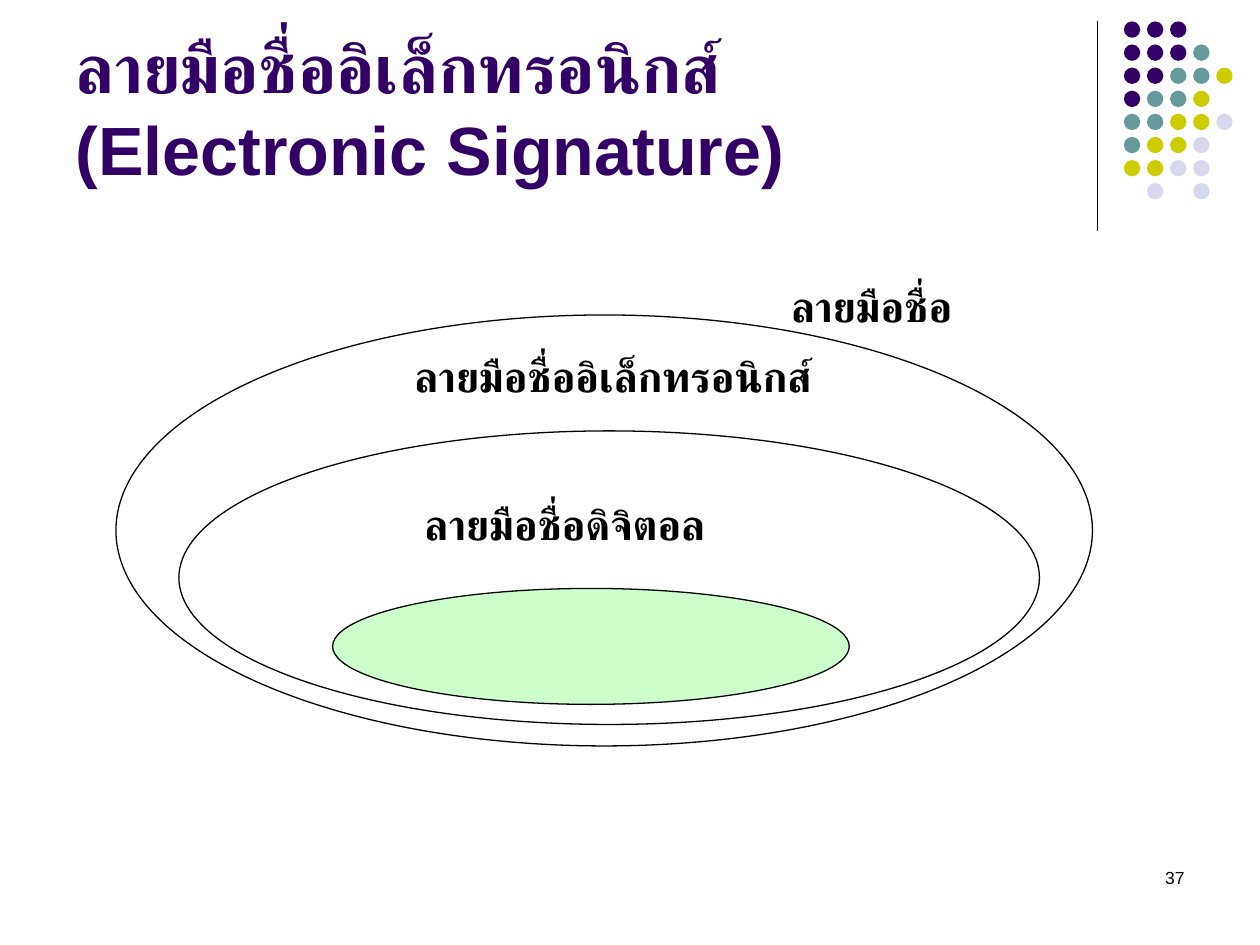
from dataclasses import dataclass
from typing import Optional

from lxml.etree import SubElement
from pptx import Presentation
from pptx.dml.color import RGBColor
from pptx.enum.shapes import MSO_CONNECTOR, MSO_SHAPE
from pptx.enum.text import MSO_ANCHOR, PP_ALIGN
from pptx.oxml.ns import qn
from pptx.util import Inches, Pt

COLORS = {
    "black": "000000",
    "purple": "330066",
    "teal": "669999",
    "olive": "CCCC00",
    "lavender": "D8D8EC",
    "mint": "CCFFCC",
}

# Dot pattern: one letter per colour, a space for a gap
DOT_COLORS = {"P": "purple", "T": "teal", "O": "olive", "L": "lavender"}
DOT_ROWS = ["PPP", "PPPT", "PPTTO", "PTTO", "TTOOL", "TOOL", "OOLL", " L L"]
DOT_LEFT, DOT_TOP, DOT_SIZE = 8.92, 0.17, 0.13
DOT_PITCH = 1.1 / 6


@dataclass
class Ellipse:
    left: float
    top: float
    width: float
    height: float
    fill: Optional[str] = None
    line: Optional[str] = "black"


@dataclass
class Label:
    lines: list[str]
    left: float
    top: float
    width: float
    height: float
    size: float = 24
    font: str = "Karla"
    color: str = "black"
    bold: bool = True
    align: PP_ALIGN = PP_ALIGN.LEFT
    anchor: MSO_ANCHOR = MSO_ANCHOR.TOP


SIGNATURE_SETS = [
    Ellipse(0.92, 2.5, 7.75, 3.42),
    Ellipse(1.42, 3.42, 6.83, 2.33),
    Ellipse(2.64, 4.67, 4.1, 0.92, fill="mint"),
]

LABELS = [
    Label(["37"], 7.17, 6.83, 2.33, 0.5, size=10, font="Arial", bold=False,
          align=PP_ALIGN.RIGHT),
    Label(["ลายมือชื่ออิเล็กทรอนิกส์ ", "(Electronic Signature)"],
          0.5, 0.13, 8.25, 1.42, size=39, font="Arial", color="purple",
          anchor=MSO_ANCHOR.BOTTOM),
    Label(["ลายมือชื่อ"], 6.18, 2.18, 3.08, 0.5),
    Label(["ลายมือชื่ออิเล็กทรอนิกส์"], 3.19, 2.73, 4.1, 0.5),
    Label(["ลายมือชื่อดิจิตอล"], 3.27, 3.91, 3.58, 0.5),
]


def rgb(name: str) -> RGBColor:
    return RGBColor.from_string(COLORS[name])


def draw_ellipse(shapes, ellipse: Ellipse) -> None:
    shape = shapes.add_shape(
        MSO_SHAPE.OVAL, Inches(ellipse.left), Inches(ellipse.top),
        Inches(ellipse.width), Inches(ellipse.height))
    shape.shadow.inherit = False
    if ellipse.fill:
        shape.fill.solid()
        shape.fill.fore_color.rgb = rgb(ellipse.fill)
    else:
        shape.fill.background()
    if ellipse.line:
        shape.line.color.rgb = rgb(ellipse.line)
        shape.line.width = Pt(0.75)
    else:
        shape.line.fill.background()


def draw_label(shapes, label: Label) -> None:
    box = shapes.add_textbox(Inches(label.left), Inches(label.top),
                             Inches(label.width), Inches(label.height))
    frame = box.text_frame
    frame.word_wrap = True
    frame.vertical_anchor = label.anchor
    paragraph = frame.paragraphs[0]
    paragraph.alignment = label.align
    for index, text in enumerate(label.lines):
        if index:
            paragraph.add_line_break()
        run = paragraph.add_run()
        run.text = text
        run.font.name = label.font
        run.font.size = Pt(label.size)
        run.font.bold = label.bold
        run.font.color.rgb = rgb(label.color)


def draw_divider(shapes) -> None:
    line = shapes.add_connector(MSO_CONNECTOR.STRAIGHT, Inches(8.71),
                                Inches(0.17), Inches(8.71), Inches(1.83))
    line.line.color.rgb = rgb("black")
    line.line.width = Pt(0.75)
    SubElement(line._element.spPr, qn("a:effectLst"))


def draw_dots(shapes) -> None:
    group = shapes.add_group_shape()
    for row, letters in enumerate(DOT_ROWS):
        for column, letter in enumerate(letters):
            if letter in DOT_COLORS:
                draw_ellipse(group.shapes, Ellipse(
                    DOT_LEFT + column * DOT_PITCH, DOT_TOP + row * DOT_PITCH,
                    DOT_SIZE, DOT_SIZE, fill=DOT_COLORS[letter], line=None))


def main() -> None:
    presentation = Presentation()
    presentation.slide_width = Inches(10)
    presentation.slide_height = Inches(7.5)
    slide = presentation.slides.add_slide(presentation.slide_layouts[6])

    # Corner decoration
    draw_divider(slide.shapes)
    draw_dots(slide.shapes)

    # Nested signature sets, then all text
    for ellipse in SIGNATURE_SETS:
        draw_ellipse(slide.shapes, ellipse)
    for label in LABELS:
        draw_label(slide.shapes, label)

    presentation.save("out.pptx")


if __name__ == "__main__":
    main()
